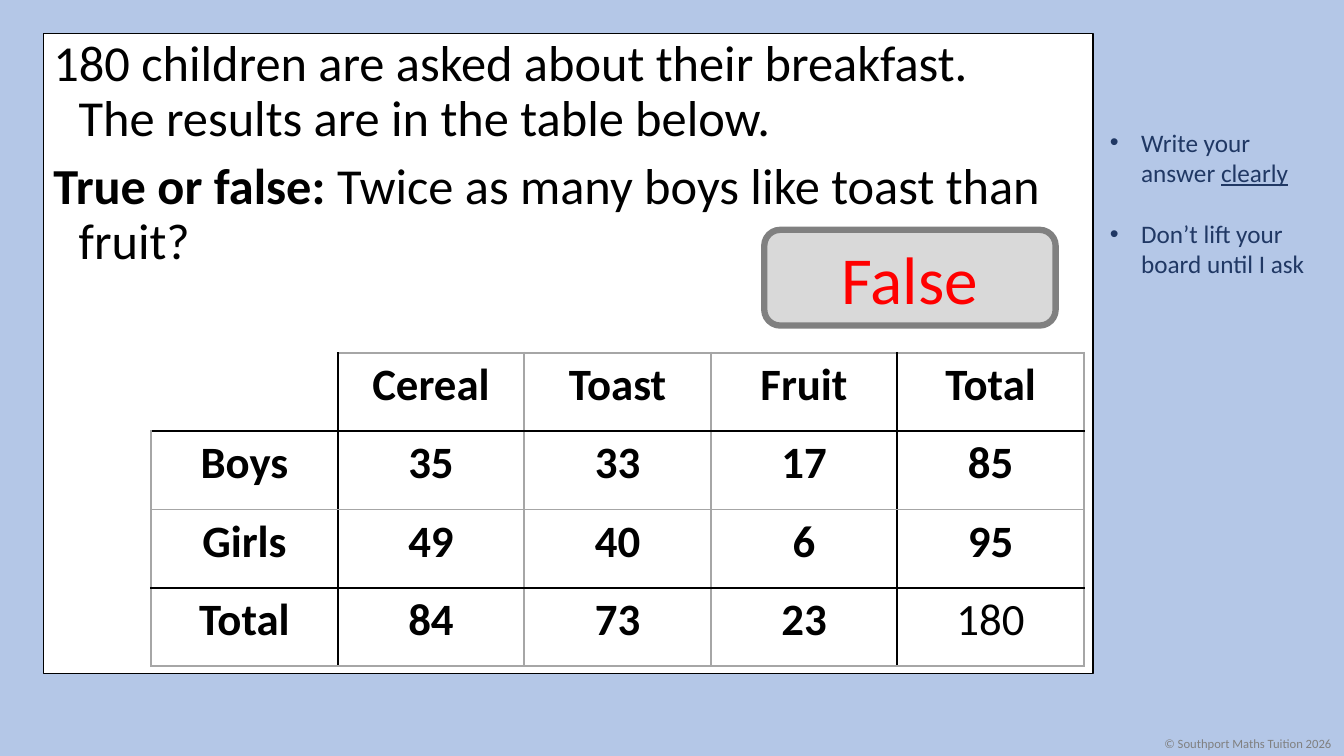
import pptx
import pptx.dml.color
import pptx.enum.shapes
import pptx.enum.text
import pptx.oxml
import pptx.oxml.ns
import pptx.util
from pptx.util import Inches

FONT = "Calibri"
BLACK, WHITE, GREY = "000000", "FFFFFF", "A6A6A6"
NAVY, MID_GREY = "203864", "808080"
PANEL = (0.43, 0.33, 10.41, 6.35)
CENTER = pptx.enum.text.PP_ALIGN.CENTER
SHAPES = pptx.enum.shapes.MSO_SHAPE

BREAKFASTS = [
    ["", "Cereal", "Toast", "Fruit", "Total"],
    ["Boys", "35", "33", "17", "85"],
    ["Girls", "49", "40", "6", "95"],
    ["Total", "84", "73", "23", "180"],
]
DARK_RULES = (1, 3)
DARK_COLUMN_RULES = (1, 4)


def color(value):
    return pptx.dml.color.RGBColor.from_string(value)


def fill_solid(item, value):
    item.fill.solid()
    item.fill.fore_color.rgb = color(value)


def place(shape, box):
    for name, value in zip(("left", "top", "width", "height"), box):
        setattr(shape, name, Inches(value))


def add_run(paragraph, text, size, font_color, **font_format):
    """Add text to the paragraph, turning each newline into a line break."""
    for index, line in enumerate(text.split("\n")):
        if index:
            paragraph.add_line_break()
        run = paragraph.add_run()
        run.text = line
        settings = {"name": FONT, "size": pptx.util.Pt(size), **font_format}
        for name, value in settings.items():
            setattr(run.font, name, value)
        run.font.color.rgb = color(font_color)


def set_hanging(paragraph, indent, bullet=None):
    properties = paragraph._p.get_or_add_pPr()
    properties.set("marL", str(Inches(indent)))
    properties.set("indent", str(-Inches(indent)))
    if bullet:
        mark = pptx.oxml.ns.qn("a:buFont")
        properties.append(properties.makeelement(mark, {"typeface": "Arial"}))
    tag, attributes = ("a:buChar", {"char": bullet}) if bullet else ("a:buNone", {})
    properties.append(properties.makeelement(pptx.oxml.ns.qn(tag), attributes))


def add_paragraphs(frame, contents, size, font_color, indent=0, bullet=None, gap=0, **spacing):
    """Write one paragraph for each list of (text, font format) pairs."""
    for index, parts in enumerate(contents):
        paragraph = frame.add_paragraph() if index else frame.paragraphs[0]
        if indent:
            set_hanging(paragraph, indent, bullet)
        paragraph.space_before = pptx.util.Pt(gap if index else 0)
        for name, value in spacing.items():
            setattr(paragraph, name, value)
        for text, font_format in parts:
            add_run(paragraph, text, size, font_color, **font_format)


def add_box(slide, kind, box, fill, line, line_width):
    shape = slide.shapes.add_shape(kind, *map(Inches, box))
    shape.shadow.inherit = False
    fill_solid(shape, fill)
    shape.line.color.rgb = color(line)
    shape.line.width = pptx.util.Pt(line_width)
    return shape


def add_text(slide, box, wrap, contents, size, font_color, **settings):
    frame = slide.shapes.add_textbox(*map(Inches, box)).text_frame
    frame.word_wrap = wrap
    add_paragraphs(frame, contents, size, font_color, **settings)


def write_question(slide):
    question = slide.placeholders[1]
    place(question, PANEL)
    # Keep the text in front of the panel drawn after it.
    slide.shapes._spTree.append(question._element)
    question.text_frame.auto_size = pptx.enum.text.MSO_AUTO_SIZE.NONE
    contents = [
        [("180 children are asked about their breakfast.\n"
          "The results are in the table below.", {})],
        [("True or false: ", {"bold": True}),
         ("Twice as many boys like toast than fruit?", {})],
    ]
    add_paragraphs(question.text_frame, contents, 36, BLACK,
                   indent=0.25, gap=10, line_spacing=0.9)


def set_borders(cell, borders):
    """Draw borders given as (side, colour) pairs in L, R, T, B order."""
    properties = cell._tc.get_or_add_tcPr()
    for index, (side, value) in enumerate(borders):
        properties.insert(index, pptx.oxml.parse_xml(
            f'<a:ln{side} {pptx.oxml.ns.nsdecls("a")} w="{pptx.util.Pt(1.5)}">'
            f'<a:solidFill><a:srgbClr val="{value}"/></a:solidFill></a:ln{side}>'))


def rule_color(index, dark_rules):
    return BLACK if index in dark_rules else GREY


def add_breakfast_table(slide):
    rows, columns = len(BREAKFASTS), len(BREAKFASTS[0])
    box = map(Inches, (1.5, 3.5, 9.25, 3.11))
    table = slide.shapes.add_table(rows, columns, *box).table
    table.horz_banding = False
    table.first_row = False
    for row, labels in enumerate(BREAKFASTS):
        for column, label in enumerate(labels):
            cell = table.cell(row, column)
            fill_solid(cell, WHITE)
            borders = [
                ("L", rule_color(column, DARK_COLUMN_RULES)),
                ("R", rule_color(column + 1, DARK_COLUMN_RULES)),
                ("T", rule_color(row, DARK_RULES)),
                ("B", rule_color(row + 1, DARK_RULES)),
            ]
            is_corner = row == column == 0
            set_borders(cell, borders[1::2] if is_corner else borders)
            if label:
                is_grand_total = row == rows - 1 and column == columns - 1
                add_paragraphs(cell.text_frame, [[(label, {"bold": not is_grand_total})]],
                               32, BLACK, alignment=CENTER)


def main():
    presentation = pptx.Presentation()
    presentation.slide_width = Inches(13.33)
    presentation.slide_height = Inches(7.5)
    slide = presentation.slides.add_slide(presentation.slide_layouts[1])
    fill_solid(slide.background, "B4C7E7")
    title = slide.shapes.title._element
    title.getparent().remove(title)

    add_box(slide, SHAPES.RECTANGLE, PANEL, WHITE, BLACK, 1)
    reminders = [
        [("Write your answer ", {}), ("clearly", {"underline": True})],
        [("Don’t lift your board until I ask", {})],
    ]
    add_text(slide, (10.91, 1.21, 2.32, 1.62), True, reminders, 18, NAVY,
             indent=0.31, bullet="•", gap=22)
    add_text(slide, (11.45, 7.25, 1.88, 0.25), False,
             [[("© Southport Maths Tuition 2026", {})]], 9, MID_GREY)
    write_question(slide)
    answer = add_box(slide, SHAPES.ROUNDED_RECTANGLE, (7.58, 2.28, 2.89, 0.95),
                     "D9D9D9", MID_GREY, 4.5)
    add_paragraphs(answer.text_frame, [[("False", {})]], 48, "FF0000", alignment=CENTER)
    add_breakfast_table(slide)
    presentation.save("out.pptx")


if __name__ == "__main__":
    main()
